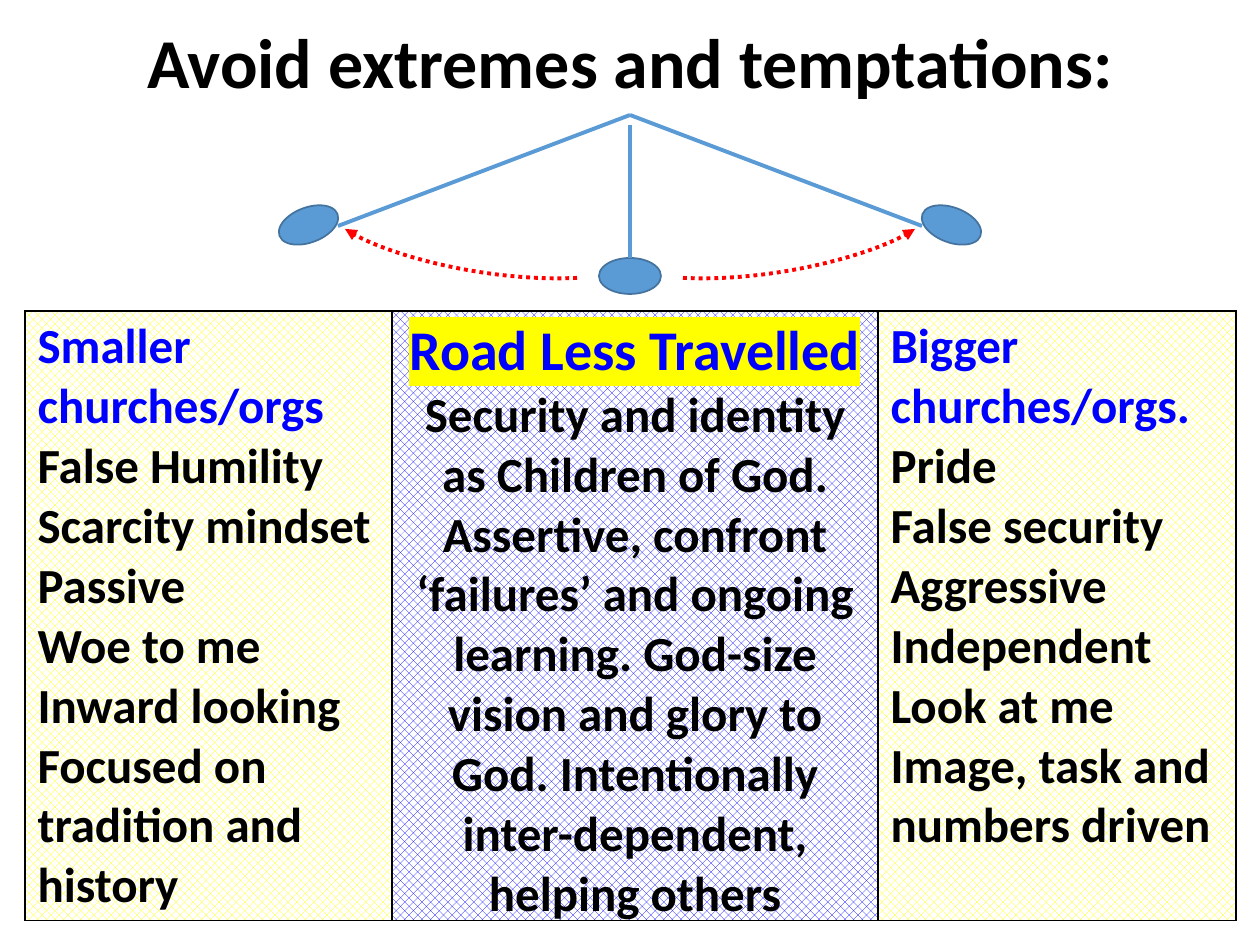
from lxml import etree
from pptx import Presentation
from pptx.dml.color import RGBColor
from pptx.enum.dml import MSO_LINE, MSO_PATTERN
from pptx.enum.shapes import MSO_CONNECTOR, MSO_SHAPE
from pptx.enum.text import MSO_ANCHOR, PP_ALIGN
from pptx.oxml.ns import qn
from pptx.util import Emu, Pt

LEFT, CENTER = PP_ALIGN.LEFT, PP_ALIGN.CENTER
MIDDLE = MSO_ANCHOR.MIDDLE
STRAIGHT = MSO_CONNECTOR.STRAIGHT
ELLIPSE = MSO_SHAPE.OVAL
PERCENT_50 = MSO_PATTERN.PERCENT_50
DOTTED = MSO_LINE.ROUND_DOT

BLACK = RGBColor(0x00, 0x00, 0x00)
WHITE = RGBColor(0xFF, 0xFF, 0xFF)
BLUE = RGBColor(0x00, 0x00, 0xFF)
YELLOW = RGBColor(0xFF, 0xFF, 0x00)
RED = RGBColor(0xFF, 0x00, 0x00)
STEEL = RGBColor(0x5B, 0x9B, 0xD5)
STEEL_DARK = RGBColor(0x43, 0x73, 0x9E)
FONT = "Calibri"

COLUMNS = [
    (367, YELLOW, LEFT, 28, None,
     ["Smaller churches/orgs", "False Humility", "Scarcity mindset", "Passive",
      "Woe to me", "Inward looking", "Focused on tradition and history"]),
    (486, BLUE, CENTER, 32, YELLOW,
     ["Road Less Travelled", "Security and identity as Children of God.",
      "Assertive, confront ‘failures’ and ongoing learning. God-size vision and "
      "glory to God. Intentionally inter-dependent, helping others"]),
    (358, YELLOW, LEFT, 28, None,
     ["Bigger churches/orgs.", "Pride", "False security", "Aggressive",
      "Independent", "Look at me", "Image, task and numbers driven"]),
]


def px(n):
    return Emu(round(n * 914400 / 126))


def style_text(p, size, color, align):
    p.alignment = align
    for r in p.runs:
        r.font.name = FONT
        r.font.size = Pt(size)
        r.font.bold = True
        r.font.color.rgb = color


def add_color(parent, tag, color):
    el = etree.SubElement(parent, qn(tag))
    etree.SubElement(el, qn("a:srgbClr")).set("val", str(color))
    return el


def highlight(r, color):
    rPr = r.font._element
    rPr.find(qn("a:solidFill")).addnext(add_color(rPr, "a:highlight", color))


def add_borders(cell, color):
    tcPr = cell._tc.get_or_add_tcPr()
    for i, side in enumerate(("a:lnL", "a:lnR", "a:lnT", "a:lnB")):
        ln = etree.Element(qn(side), w=str(Pt(1)))
        add_color(ln, "a:solidFill", color)
        tcPr.insert(i, ln)


def add_title(s, x, y, w, h):
    tf = s.shapes.add_textbox(px(x), px(y), px(w), px(h)).text_frame
    tf.word_wrap = True
    tf.vertical_anchor = MIDDLE
    tf.text = "Avoid extremes and temptations:"
    style_text(tf.paragraphs[0], 40, BLACK, CENTER)


def add_bob(s, x, y, w, h, rotation=0):
    sp = s.shapes.add_shape(ELLIPSE, px(x), px(y), px(w), px(h))
    sp.shadow.inherit = False
    sp.rotation = rotation
    sp.fill.solid()
    sp.fill.fore_color.rgb = STEEL
    sp.line.color.rgb = STEEL_DARK
    sp.line.width = Pt(1)
    return sp


def add_rod(s, x1, y1, x2, y2):
    rod = s.shapes.add_connector(STRAIGHT, px(x1), px(y1), px(x2), px(y2))
    rod.line.color.rgb = STEEL
    rod.line.width = Pt(2.25)
    etree.SubElement(rod._element.spPr, qn("a:effectLst"))
    return rod


def add_swing(s, points):
    emu = [(px(x), px(y)) for x, y in points]
    fb = s.shapes.build_freeform(*emu[0])
    fb.add_line_segments(emu[1:], close=False)
    sp = fb.convert_to_shape()
    sp.shadow.inherit = False
    sp.fill.background()
    sp.line.color.rgb = RED
    sp.line.width = Pt(2.25)
    sp.line.dash_style = DOTTED
    etree.SubElement(sp.line._ln, qn("a:tailEnd")).set("type", "triangle")
    path = sp._element.spPr.find(".//" + qn("a:path"))
    curve = etree.SubElement(path, qn("a:cubicBezTo"))
    for segment in path.findall(qn("a:lnTo")):
        curve.append(segment[0])
        path.remove(segment)


def add_pendulum(s, x, y, w, h):
    mid = x + w / 2
    bob = add_bob(s, mid - 31, y + h - 36, 62, 36)
    rod = add_rod(s, mid, y + h - 36, mid, y + 10)
    rod.begin_connect(bob, 0)
    swing = [(53, 163), (141, 167), (251, 138), (285, 114)]
    for side, rotation in ((1, 290.6), (-1, 69.4)):
        add_bob(s, mid + side * (w / 2 - 17.5) - 17.5, y + 79, 35, 62, rotation)
        add_rod(s, mid + side * (w / 2 - 47), y + 111, mid, y)
        add_swing(s, [(mid + side * dx, y + dy) for dx, dy in swing])


def add_comparison(s, x, y, w, h):
    table = s.shapes.add_table(1, len(COLUMNS), px(x), px(y), px(w), px(h)).table
    table.first_row = table.horz_banding = False
    table.rows[0].height = px(h)
    for i, (width, color, align, size, mark, lines) in enumerate(COLUMNS):
        table.columns[i].width = px(width)
        cell = table.cell(0, i)
        cell.fill.patterned()
        cell.fill.pattern = PERCENT_50
        cell.fill.fore_color.rgb = color
        cell.fill.back_color.rgb = WHITE
        add_borders(cell, BLACK)
        tf = cell.text_frame
        tf.text = "\n".join(lines)
        heading, *body = tf.paragraphs
        style_text(heading, size, BLUE, align)
        if mark:
            highlight(heading.runs[0], mark)
        for p in body:
            style_text(p, 28, BLACK, align)


def main():
    prs = Presentation()
    prs.slide_width, prs.slide_height = px(1260), px(945)
    s = prs.slides.add_slide(prs.slide_layouts[6])
    add_title(s, 25, 19, 1210, 83)
    add_comparison(s, 25, 311, 1211, 608)
    add_pendulum(s, 291, 115, 678, 179)
    prs.save("out.pptx")


if __name__ == "__main__":
    main()
